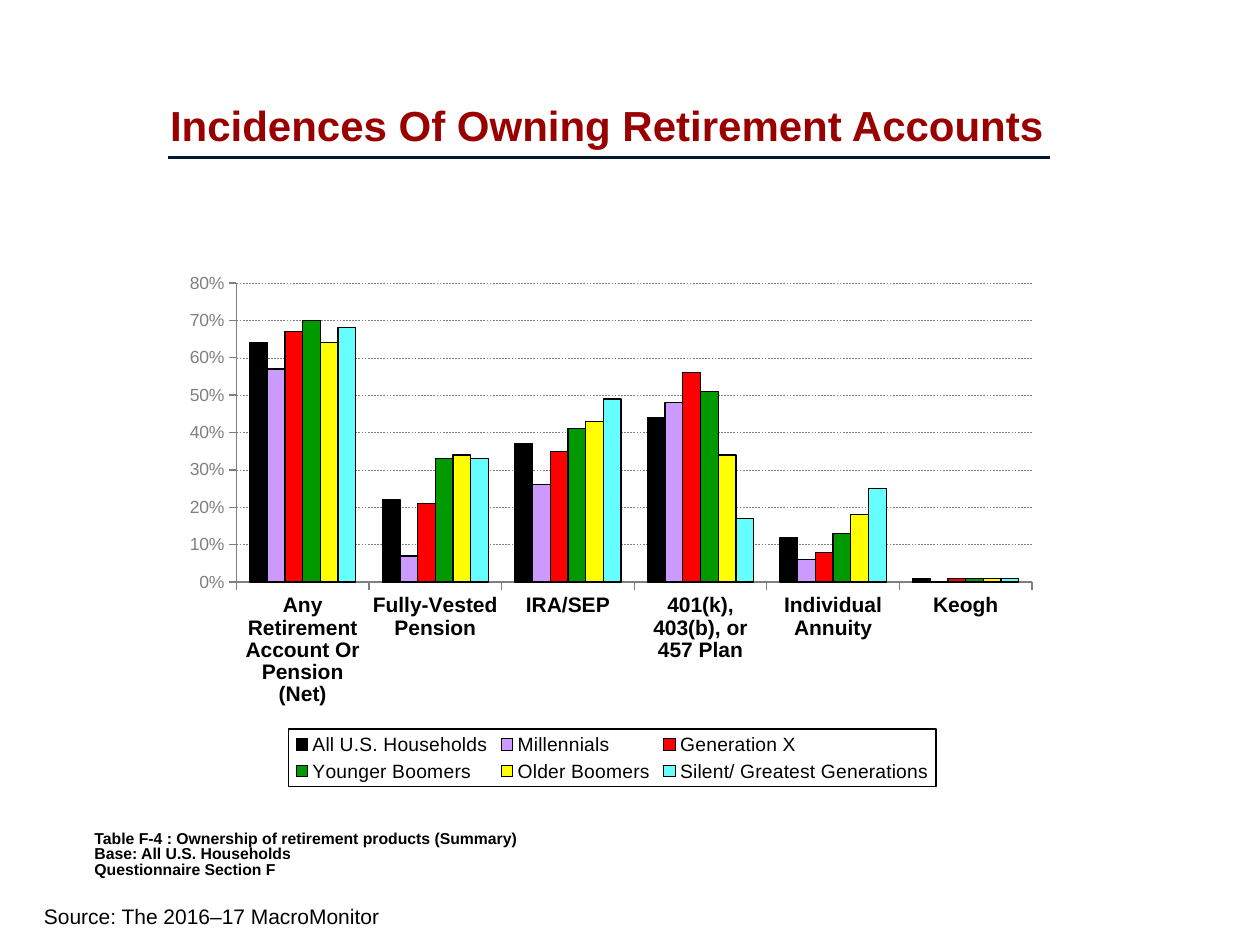
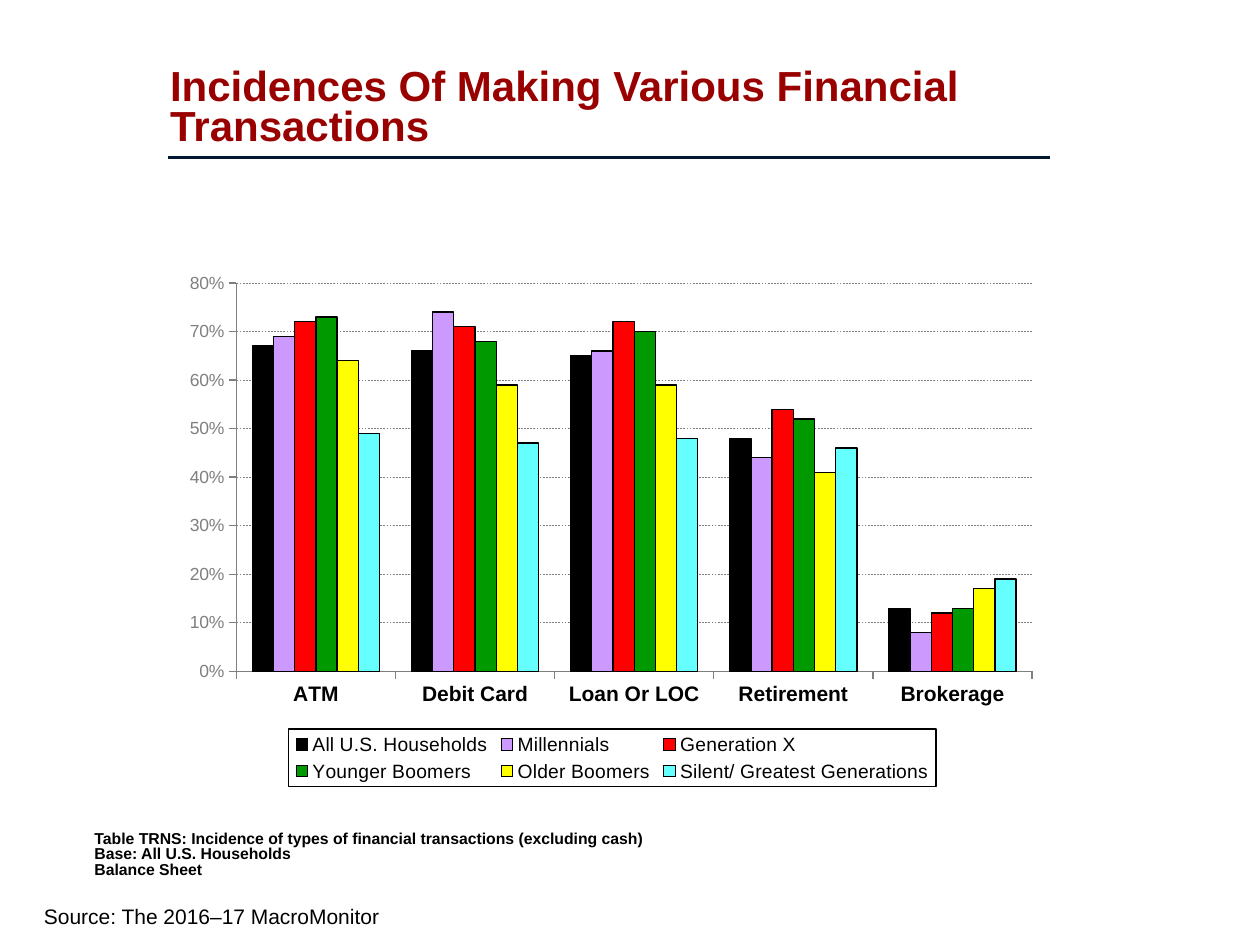
from dataclasses import dataclass

from lxml.etree import SubElement
from pptx import Presentation
from pptx.chart.data import CategoryChartData
from pptx.dml.color import RGBColor
from pptx.enum.chart import XL_CHART_TYPE as ChartType
from pptx.enum.chart import XL_LEGEND_POSITION as LegendPosition
from pptx.enum.chart import XL_TICK_MARK as TickMark
from pptx.enum.dml import MSO_LINE as LineDash
from pptx.enum.shapes import MSO_CONNECTOR as Connector
from pptx.enum.text import MSO_ANCHOR as Anchor
from pptx.oxml import parse_xml
from pptx.oxml.ns import nsdecls, qn
from pptx.util import Inches, Pt


@dataclass(frozen=True)
class Theme:
    font: str = "Arial"
    title: str = "990000"
    rule: str = "00192F"
    ink: str = "000000"
    axis: str = "7F7F7F"
    title_size: int = 24
    source_size: int = 12
    note_size: int = 9
    category_size: int = 12
    legend_size: int = 11
    value_size: int = 10


THEME = Theme()
SOURCE = "Source: The 2016–17 MacroMonitor"
GENERATIONS = {
    "All U.S. Households": "000000",
    "Millennials": "CC99FF",
    "Generation X": "FF0000",
    "Younger Boomers": "009900",
    "Older Boomers": "FFFF00",
    "Silent/ Greatest Generations": "66FFFF",
}
LEGEND_AREA = (0.13, 0.89, 0.74, 0.11)

PAGES = [
    {
        "title": "Incidences Of Owning Retirement Accounts",
        "note": [
            "Table F-4 : Ownership of retirement products (Summary)",
            "Base: All U.S. Households",
            "Questionnaire Section F",
        ],
        "plot_height": 0.57,
        "shares": {
            "Any Retirement Account Or Pension (Net)": (0.64, 0.57, 0.67, 0.7, 0.64, 0.68),
            "Fully-Vested Pension": (0.22, 0.07, 0.21, 0.33, 0.34, 0.33),
            "IRA/SEP": (0.37, 0.26, 0.35, 0.41, 0.43, 0.49),
            "401(k), 403(b), or 457 Plan": (0.44, 0.48, 0.56, 0.51, 0.34, 0.17),
            "Individual Annuity": (0.12, 0.06, 0.08, 0.13, 0.18, 0.25),
            "Keogh": (0.01, 0, 0.01, 0.01, 0.01, 0.01),
        },
    },
    {
        "title": "Incidences Of Making Various Financial Transactions",
        "note": [
            "Table TRNS: Incidence of types of financial transactions (excluding cash)",
            "Base: All U.S. Households",
            "Balance Sheet",
        ],
        "plot_height": 0.74,
        "shares": {
            "ATM": (0.67, 0.69, 0.72, 0.73, 0.64, 0.49),
            "Debit Card": (0.66, 0.74, 0.71, 0.68, 0.59, 0.47),
            "Loan Or LOC": (0.65, 0.66, 0.72, 0.7, 0.59, 0.48),
            "Retirement": (0.48, 0.44, 0.54, 0.52, 0.41, 0.46),
            "Brokerage": (0.13, 0.08, 0.12, 0.13, 0.17, 0.19),
        },
    },
]


def style_font(font, size, color=THEME.ink, bold=False):
    font.name = THEME.font
    font.size = Pt(size)
    font.bold = bold
    font.color.rgb = RGBColor.from_string(color)


def style_line(line, color, width):
    line.color.rgb = RGBColor.from_string(color)
    line.width = Pt(width)


def add_text(page, text, area, size, color=THEME.ink, bold=False,
             anchor=Anchor.TOP, insets=(0.1, 0.05, 0.1, 0.05), spacing=1.0):
    box = page.shapes.add_textbox(*map(Inches, area))
    frame = box.text_frame
    frame.word_wrap = True
    frame.vertical_anchor = anchor
    (frame.margin_left, frame.margin_top,
     frame.margin_right, frame.margin_bottom) = map(Inches, insets)
    para = frame.paragraphs[0]
    para.text = text
    para.line_spacing = spacing
    style_font(para.font, size, color, bold)


def add_rule(page):
    rule = page.shapes.add_connector(
        Connector.STRAIGHT, Inches(1.33), Inches(1.25), Inches(8.33), Inches(1.25))
    style_line(rule.line, THEME.rule, 2)
    SubElement(rule.element.spPr, qn("a:effectLst"))


def set_layout(parent, index, area, inner=False):
    for old in parent.findall(qn("c:layout")):
        parent.remove(old)
    target = '<c:layoutTarget val="inner"/>' if inner else ""
    modes = "".join(f'<c:{side}Mode val="edge"/>' for side in "xy")
    sizes = "".join(f'<c:{key} val="{value}"/>' for key, value in zip("xywh", area))
    parent.insert(index, parse_xml(
        f'<c:layout {nsdecls("c")}><c:manualLayout>{target}{modes}{sizes}'
        '</c:manualLayout></c:layout>'))


def style_axes(chart):
    categories, values = chart.category_axis, chart.value_axis
    for axis in (categories, values):
        axis.major_tick_mark = TickMark.OUTSIDE
        axis.minor_tick_mark = TickMark.NONE
        style_line(axis.format.line, THEME.axis, 0.75)
    style_font(categories.tick_labels.font, THEME.category_size, bold=True)
    style_font(values.tick_labels.font, THEME.value_size, THEME.axis)
    categories.has_major_gridlines = False
    values.minimum_scale, values.maximum_scale, values.major_unit = 0, 0.8, 0.1
    values.tick_labels.number_format = "0%"
    values.tick_labels.number_format_is_linked = False
    values.has_major_gridlines = True
    grid = values.major_gridlines.format.line
    style_line(grid, THEME.axis, 0.25)
    grid.dash_style = LineDash.DASH


def style_legend(chart):
    chart.has_legend = True
    chart.legend.position = LegendPosition.BOTTOM
    chart.legend.include_in_layout = False
    style_font(chart.legend.font, THEME.legend_size)
    legend = chart.element.find(".//" + qn("c:legend"))
    set_layout(legend, 1, LEGEND_AREA)
    legend.find(qn("c:overlay")).addnext(parse_xml(
        f'<c:spPr {nsdecls("c", "a")}><a:ln w="9525"><a:solidFill>'
        f'<a:srgbClr val="{THEME.ink}"/></a:solidFill></a:ln></c:spPr>'))


def add_share_chart(page, shares, plot_height):
    data = CategoryChartData(number_format="0%")
    data.categories = list(shares)
    for name, values in zip(GENERATIONS, zip(*shares.values())):
        data.add_series(name, values)
    area = map(Inches, (1.39, 2.08, 6.94, 4.17))
    chart = page.shapes.add_chart(ChartType.COLUMN_CLUSTERED, *area, data).chart
    chart.has_title = False
    style_font(chart.font, THEME.value_size)
    plot = chart.plots[0]
    plot.gap_width, plot.overlap, plot.vary_by_categories = 150, 0, False
    for series, color in zip(plot.series, GENERATIONS.values()):
        series.format.fill.solid()
        series.format.fill.fore_color.rgb = RGBColor.from_string(color)
        style_line(series.format.line, THEME.ink, 0.75)
    style_axes(chart)
    style_legend(chart)
    plot_area = chart.element.find(".//" + qn("c:plotArea"))
    set_layout(plot_area, 0, (0.07, 0.04, 0.91, plot_height), inner=True)


def add_page(deck, title, note, plot_height, shares):
    page = deck.slides.add_slide(deck.slide_layouts[6])
    add_text(page, SOURCE, (0.25, 7.12, 8.92, 0.3), THEME.source_size)
    add_rule(page)
    add_text(page, title, (1.35, 0.53, 7.01, 0.71), THEME.title_size, THEME.title,
             bold=True, anchor=Anchor.BOTTOM, insets=(0, 0, 0, 0.05), spacing=0.8)
    add_share_chart(page, shares, plot_height)
    add_text(page, "\v".join(note), (0.35, 6.35, 8.5, 0.75), THEME.note_size,
             bold=True, anchor=Anchor.BOTTOM, insets=(0.4, 0.13, 0, 0.13), spacing=0.8)


def main():
    deck = Presentation()
    deck.slide_width, deck.slide_height = Inches(10), Inches(7.5)
    for content in PAGES:
        add_page(deck, **content)
    deck.save("out.pptx")


if __name__ == "__main__":
    main()
